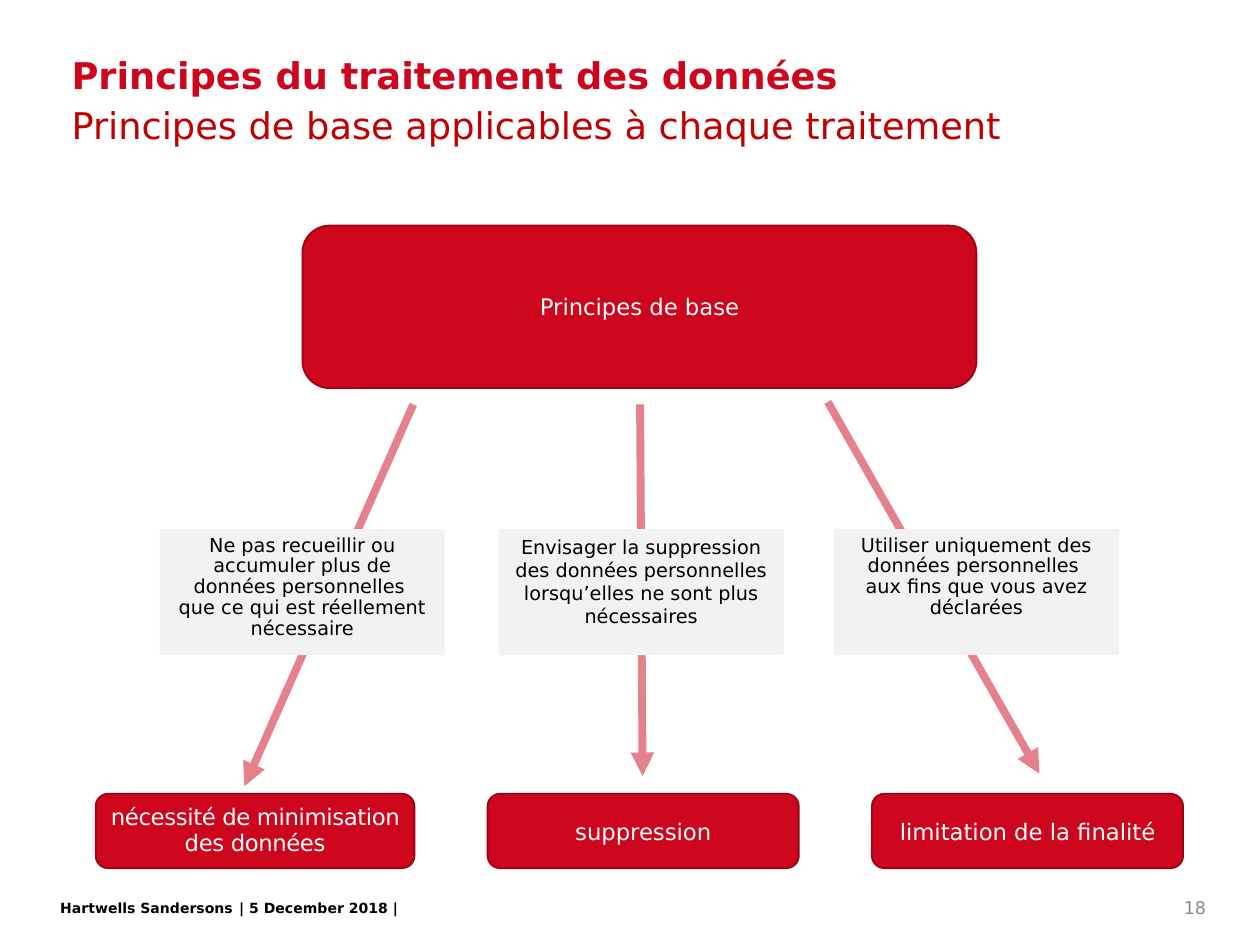
from lxml import etree
from pptx import Presentation
from pptx.dml.color import RGBColor
from pptx.enum.shapes import MSO_CONNECTOR, MSO_SHAPE
from pptx.enum.text import MSO_ANCHOR, PP_ALIGN
from pptx.oxml.ns import qn
from pptx.util import Inches, Pt

STRAIGHT = MSO_CONNECTOR.STRAIGHT
RECT, ROUNDED = MSO_SHAPE.RECTANGLE, MSO_SHAPE.ROUNDED_RECTANGLE
TOP, MIDDLE = MSO_ANCHOR.TOP, MSO_ANCHOR.MIDDLE
LEFT, CENTER, RIGHT = PP_ALIGN.LEFT, PP_ALIGN.CENTER, PP_ALIGN.RIGHT

RED = RGBColor(0xCD, 0x05, 0x1D)
EDGE = RGBColor(0x98, 0x04, 0x15)
DARK_RED = RGBColor(0xC0, 0x00, 0x00)
PALE = RGBColor(0xF2, 0xF2, 0xF2)
GREY = RGBColor(0x89, 0x89, 0x89)
BLACK = RGBColor(0x00, 0x00, 0x00)
WHITE = RGBColor(0xFF, 0xFF, 0xFF)
FONT = "DejaVu Sans"

STEPS = [
    {
        "note": "Ne pas recueillir ou accumuler plus de données personnelles \n"
                "que ce qui est réellement nécessaire",
        "note_left": 1.27, "note_format": {"line_spacing": 0.9, "space_before": Pt(12)},
        "arrow": (3.28, 3.21, 1.94, 6.24),
        "label": "nécessité de minimisation des données",
        "label_box": (0.76, 6.3, 2.53, 0.59),
        "label_format": {"line_spacing": 0.94}, "inset": 0.01, "tracking": -20,
    },
    {
        "note": "Envisager la suppression des données personnelles "
                "lorsqu’elles ne sont plus nécessaires",
        "note_left": 3.96, "note_format": {"space_before": Pt(12)},
        "arrow": (5.08, 3.21, 5.1, 6.16),
        "label": "suppression",
        "label_box": (3.87, 6.3, 2.47, 0.59),
    },
    {
        "note": "Utiliser uniquement des données personnelles \n"
                "aux fins que vous avez déclarées",
        "note_left": 6.62, "note_format": {"line_spacing": 0.9, "space_before": Pt(3.9)},
        "arrow": (6.57, 3.19, 8.25, 6.14),
        "label": "limitation de la finalité",
        "label_box": (6.92, 6.3, 2.47, 0.59),
    },
]


def set_all(obj, values):
    for name, value in values.items():
        setattr(obj, name, value)


def write(tf, text, size, color, align=LEFT, anchor=TOP, wrap=True, bold=False,
          inset=0.1, tracking=None, para=None):
    set_all(tf, {"word_wrap": wrap, "vertical_anchor": anchor,
                 "margin_left": Inches(inset), "margin_right": Inches(inset)})
    p = tf.paragraphs[0]
    p.text = text
    set_all(p, {"alignment": align, **(para or {})})
    for r in p.runs:
        set_all(r.font, {"size": Pt(size), "name": FONT, "bold": bold})
        r.font.color.rgb = color
        if tracking:
            r.font._element.set("spc", str(tracking))
    for br in p._p.findall(qn("a:br")):
        etree.SubElement(br, qn("a:rPr"), sz=str(size * 100))


def add_text(s, box, text, size, color, **options):
    sp = s.shapes.add_textbox(*map(Inches, box))
    write(sp.text_frame, text, size, color, **options)


def add_box(s, kind, box, fill, line, text, size, color, **options):
    sp = s.shapes.add_shape(kind, *map(Inches, box))
    sp.shadow.inherit = False
    sp.fill.solid()
    sp.fill.fore_color.rgb = fill
    if line is None:
        sp.line.fill.background()
    else:
        sp.line.color.rgb = line
        sp.line.width = Pt(1)
    write(sp.text_frame, text, size, color, align=CENTER, **options)


def add_arrow(s, ends):
    c = s.shapes.add_connector(STRAIGHT, *map(Inches, ends))
    c.line.color.rgb = RED
    c.line.width = Pt(4.5)
    ln = c.line._get_or_add_ln()
    etree.SubElement(ln.find(".//" + qn("a:srgbClr")), qn("a:alpha"), val="50000")
    etree.SubElement(ln, qn("a:tailEnd"), type="triangle")
    etree.SubElement(c._element.spPr, qn("a:effectLst"))


def add_heading(s, left, top, width):
    add_text(s, (left, top, width, 0.36), "Principes du traitement des données", 21, RED,
             anchor=MIDDLE, bold=True, para={"line_spacing": 0.9})
    add_text(s, (left, top + 0.37, width, 0.41),
             "Principes de base applicables à chaque traitement", 21, DARK_RED,
             para={"line_spacing": 0.9, "space_before": Pt(12)})


def add_footer(s, left, top):
    add_text(s, (left, top, 1.73, 0.24), "Hartwells Sandersons", 8, BLACK,
             wrap=False, bold=True)
    add_text(s, (left + 1.42, top, 1.64, 0.24), "| 5 December 2018 |", 8, BLACK,
             wrap=False, bold=True)
    add_text(s, (8.8, top - 0.04, 0.87, 0.3), "18", 10, GREY, align=RIGHT, anchor=MIDDLE)


def add_diagram(s, root_box, note_top):
    add_box(s, ROUNDED, root_box, RED, EDGE, "Principes de base", 13, WHITE, anchor=MIDDLE)
    for step in STEPS:
        add_box(s, ROUNDED, step["label_box"], RED, EDGE, step["label"], 13, WHITE,
                anchor=MIDDLE, inset=step.get("inset", 0.1),
                tracking=step.get("tracking"), para=step.get("label_format"))
        add_arrow(s, step["arrow"])
        add_box(s, RECT, (step["note_left"], note_top, 2.26, 1), PALE, None,
                step["note"], 11, BLACK, para=step["note_format"])


def main():
    prs = Presentation()
    prs.slide_width, prs.slide_height = Inches(10), Inches(7.5)
    s = prs.slides.add_slide(prs.slide_layouts[6])
    add_footer(s, 0.38, 7.09)
    add_heading(s, 0.47, 0.44, 9.06)
    add_diagram(s, (2.4, 1.79, 5.35, 1.29), 4.2)
    prs.save("out.pptx")


if __name__ == "__main__":
    main()
